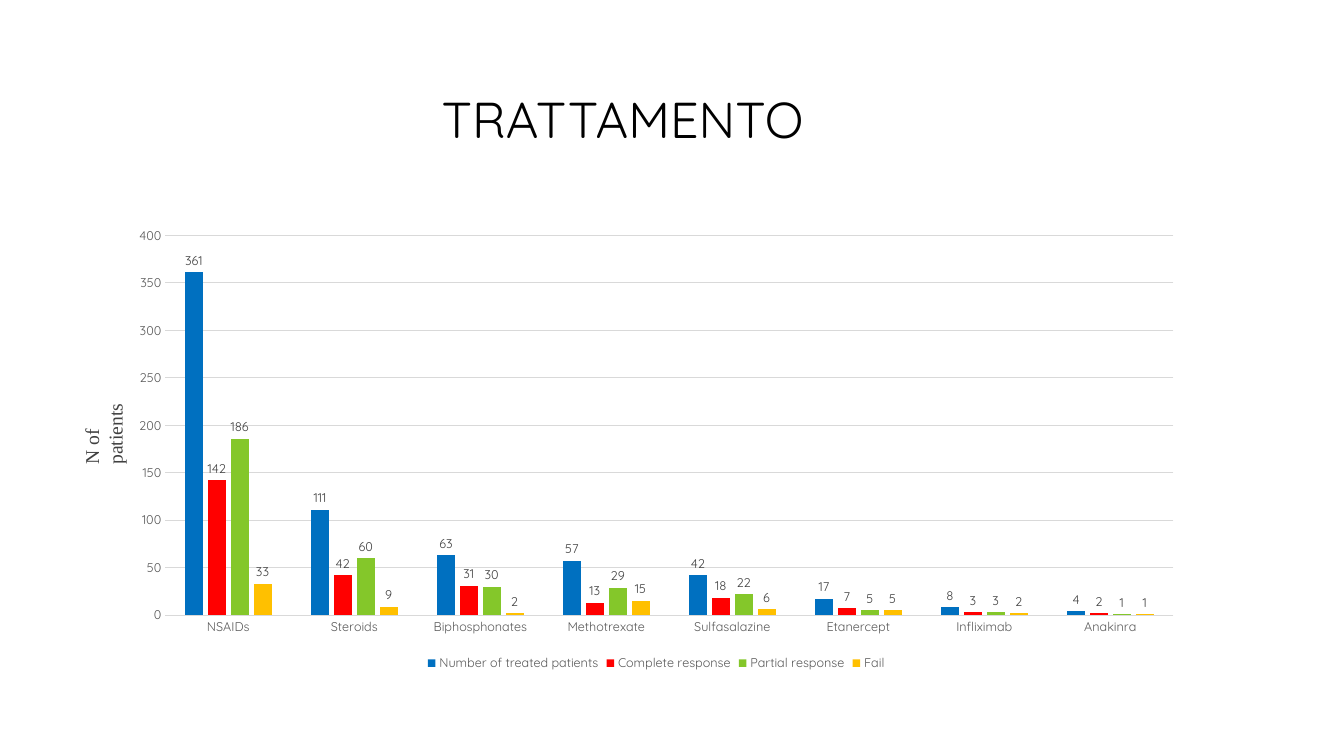
from pptx import Presentation
from pptx.chart.data import CategoryChartData
from pptx.dml.color import RGBColor
from pptx.enum.chart import XL_CHART_TYPE, XL_LABEL_POSITION, XL_LEGEND_POSITION, XL_TICK_MARK
from pptx.enum.text import MSO_ANCHOR, MSO_AUTO_SIZE, PP_ALIGN
from pptx.util import Pt

PX = 9525  # 96 px to the inch
FONT = "Quicksand"
BLACK = RGBColor(0x00, 0x00, 0x00)
DARK_GREY = RGBColor(0x40, 0x40, 0x40)
GREY = RGBColor(0x59, 0x59, 0x59)
LIGHT_GREY = RGBColor(0xD9, 0xD9, 0xD9)
BLUE = RGBColor(0x00, 0x70, 0xC0)
RED = RGBColor(0xFF, 0x00, 0x00)
GREEN = RGBColor(0x84, 0xC7, 0x2A)
AMBER = RGBColor(0xFF, 0xC0, 0x00)
CLUSTERED = XL_CHART_TYPE.COLUMN_CLUSTERED
OUTSIDE_END = XL_LABEL_POSITION.OUTSIDE_END
BOTTOM = XL_LEGEND_POSITION.BOTTOM
NO_TICK = XL_TICK_MARK.NONE
TOP = MSO_ANCHOR.TOP
GROW = MSO_AUTO_SIZE.SHAPE_TO_FIT_TEXT
LEFT = PP_ALIGN.LEFT

DRUGS = ["NSAIDs", "Steroids", "Biphosphonates", "Methotrexate",
         "Sulfasalazine", "Etanercept", "Infliximab", "Anakinra"]
OUTCOMES = [
    ("Number of treated patients", BLUE, [361, 111, 63, 57, 42, 17, 8, 4]),
    ("Complete response", RED, [142, 42, 31, 13, 18, 7, 3, 2]),
    ("Partial response", GREEN, [186, 60, 30, 29, 22, 5, 3, 1]),
    ("Fail", AMBER, [33, 9, 2, 15, 6, 5, 2, 1]),
]


def box(*lengths):
    """Turn px lengths into EMU."""
    return [length * PX for length in lengths]


def style(font, size, color, face=FONT):
    font.size = Pt(size)
    font.color.rgb = color
    font.name = face


prs = Presentation()
prs.slide_width, prs.slide_height = box(1280, 720)
slide = prs.slides.add_slide(prs.slide_layouts[5])

# Title
title = slide.shapes.title
title.left, title.top, title.width, title.height = box(411, 79, 835, 68)
title.text_frame.word_wrap = True
title.text_frame.auto_size = GROW
title.text_frame.vertical_anchor = TOP
heading = title.text_frame.paragraphs[0]
heading.alignment = LEFT
heading_run = heading.add_run()
heading_run.text = "TRATTAMENTO"
style(heading_run.font, 36, BLACK)

# Treatment chart
data = CategoryChartData()
data.categories = DRUGS
for outcome, _, patients in OUTCOMES:
    data.add_series(outcome, patients)
chart = slide.shapes.add_chart(CLUSTERED, *box(112, 208, 1026, 435), data).chart
style(chart.font, 10, BLACK)
chart.has_title = False
chart.has_legend = True
chart.legend.position = BOTTOM
chart.legend.include_in_layout = False
style(chart.legend.font, 9, GREY)

drug_axis, count_axis = chart.category_axis, chart.value_axis
for axis in (drug_axis, count_axis):
    axis.major_tick_mark = NO_TICK
    axis.minor_tick_mark = NO_TICK
    style(axis.tick_labels.font, 9, GREY)
count_axis.minimum_scale = 0
count_axis.maximum_scale = 400
count_axis.major_unit = 50
count_axis.format.line.fill.background()
for line in (drug_axis.format.line, count_axis.major_gridlines.format.line):
    line.color.rgb = LIGHT_GREY
    line.width = Pt(0.75)

plot = chart.plots[0]
plot.vary_by_categories = False
plot.gap_width = 219
plot.overlap = -27
for series, (_, color, _) in zip(plot.series, OUTCOMES):
    series.format.fill.solid()
    series.format.fill.fore_color.rgb = color
    labels = series.data_labels
    labels.show_value = True
    labels.position = OUTSIDE_END
    style(labels.font, 9, DARK_GREY)

# Rotated label of the value axis
axis_label = slide.shapes.add_textbox(*box(71, 338, 42, 114)).text_frame
axis_label.word_wrap = True
axis_label.auto_size = GROW
axis_label._txBody.bodyPr.set("vert", "vert270")
axis_run = axis_label.paragraphs[0].add_run()
axis_run.text = "N of patients"
style(axis_run.font, 14, DARK_GREY, "Times New Roman")

prs.save("out.pptx")
